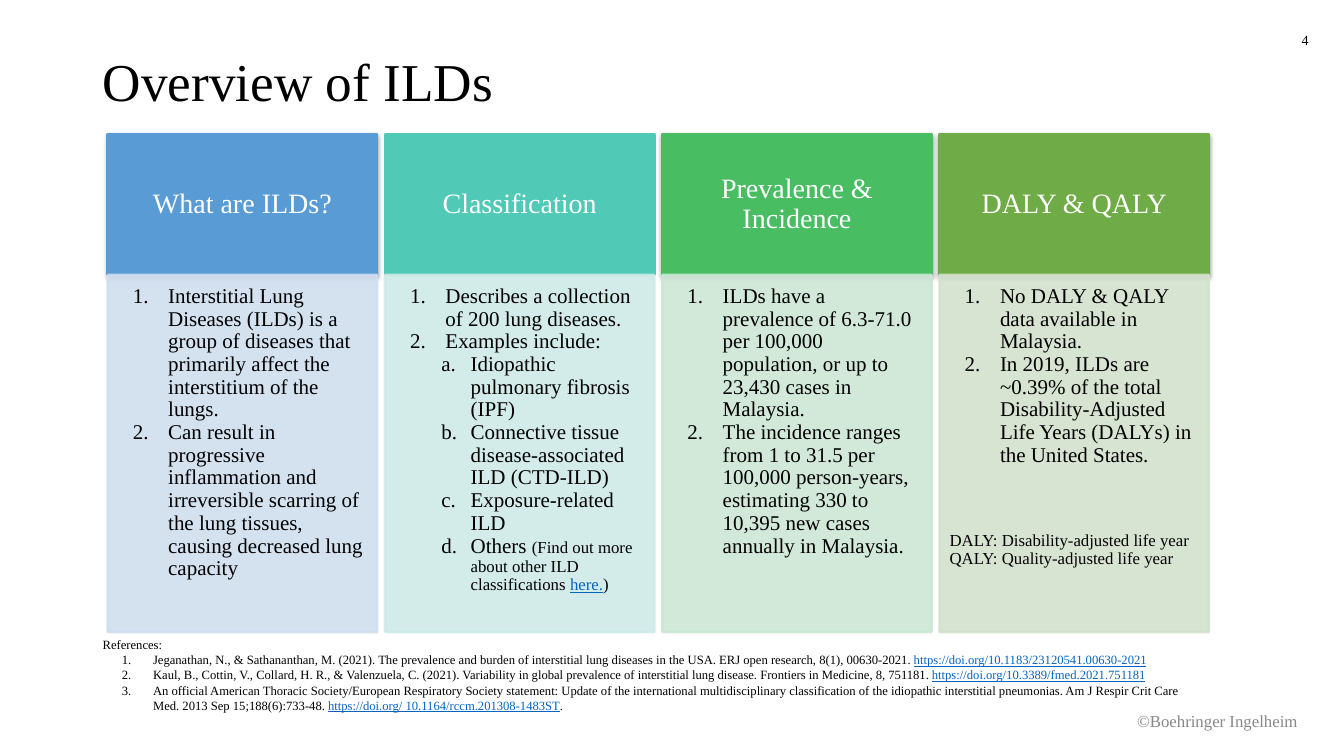
from lxml import etree
from pptx import Presentation
from pptx.dml.color import RGBColor
from pptx.enum.shapes import MSO_SHAPE
from pptx.enum.text import MSO_ANCHOR as ANCHOR, MSO_AUTO_SIZE as AUTO, PP_ALIGN as ALIGN
from pptx.oxml import parse_xml
from pptx.oxml.ns import nsdecls, qn
from pptx.util import Inches, Pt

FONT = "Times New Roman"
COLORS = {"black": "000000", "white": "FFFFFF", "grey": "888888", "link": "0563C1",
          "blue": "599BD5", "teal": "50C9B6", "green": "48BD62", "olive": "6FAB46",
          "pale blue": "CFDEEF", "pale teal": "CDEAE8", "pale green": "CCE6D4",
          "pale olive": "D3E1CC"}
BODY_ALPHA = 88000


def write(tf, *runs, size=15, color="black", align=ALIGN.LEFT, spacing=None,
          before=0, number=None, indent=(0, 0), level=0):
    """Add a paragraph; a run is a string or (text, size, colour name)."""
    p = tf.paragraphs[0]
    if p.runs:
        p = tf.add_paragraph()
    p.alignment, p.level = align, level
    p.space_before = Pt(before)
    if spacing:
        p.line_spacing = spacing
    pPr = p._p.get_or_add_pPr()
    pPr.set("marL", str(Inches(indent[0])))
    pPr.set("indent", str(Inches(indent[1])))
    if number:
        etree.SubElement(pPr, qn("a:buFont"), typeface="+mj-lt")
        etree.SubElement(pPr, qn("a:buAutoNum"), type=number)
    else:
        etree.SubElement(pPr, qn("a:buNone"))
    for run in runs:
        text, run_size, run_color = (run, size, color) if isinstance(run, str) else run
        r = p.add_run()
        r.text = text
        r.font.name, r.font.size = FONT, Pt(run_size)
        r.font.color.rgb = RGBColor.from_string(COLORS[run_color])
        r.font.underline = run_color == "link"


def add_panel(left, top, width, height, color, insets, anchor):
    sp = s.shapes.add_shape(MSO_SHAPE.RECTANGLE, Inches(left), Inches(top),
                            Inches(width), Inches(height))
    sp.shadow.inherit = False
    sp.fill.solid()
    sp.fill.fore_color.rgb = RGBColor.from_string(COLORS[color])
    sp.line.color.rgb = RGBColor.from_string(COLORS[color])
    sp.line.width = Pt(2)
    tf = sp.text_frame
    tf.word_wrap, tf.vertical_anchor = True, anchor
    tf.margin_left, tf.margin_top, tf.margin_right, tf.margin_bottom = map(Inches, insets)
    return sp


prs = Presentation()
prs.slide_width, prs.slide_height = Inches(13.33), Inches(7.5)
s = prs.slides.add_slide(prs.slide_layouts[5])

# Title
title = s.shapes.title
title.left, title.top, title.width, title.height = map(Inches, (0.92, 0.4, 11.5, 0.87))
tf = title.text_frame
tf.auto_size, tf.vertical_anchor = AUTO.NONE, ANCHOR.MIDDLE
write(tf, "Overview of ILDs", size=38, spacing=0.9)

# Slide number and footer
for text, box, size, color, align in [
    ("4", (12.69, 0.15, 0.51, 0.5), 10, "black", ALIGN.CENTER),
    ("©Boehringer Ingelheim", (8.47, 6.95, 4.5, 0.4), 12, "grey", ALIGN.RIGHT),
]:
    tf = s.shapes.add_textbox(*map(Inches, box)).text_frame
    tf.word_wrap, tf.vertical_anchor = True, ANCHOR.MIDDLE
    write(tf, text, size=size, color=color, align=align)

# References
references = [
    ["Jeganathan, N., & Sathananthan, M. (2021). The prevalence and burden of interstitial "
     "lung diseases in the USA. ERJ open research, 8(1), 00630-2021. ",
     ("https://doi.org/10.1183/23120541.00630-2021", 9, "link")],
    ["Kaul, B., Cottin, V., Collard, H. R., & Valenzuela, C. (2021). Variability in global "
     "prevalence of interstitial lung disease. Frontiers in Medicine, 8, 751181. ",
     ("https://doi.org/10.3389/fmed.2021.751181", 9, "link")],
    ["An official American Thoracic Society/European Respiratory Society statement: Update of "
     "the international multidisciplinary classification of the idiopathic interstitial "
     "pneumonias. Am J Respir Crit Care Med. 2013 Sep 15;188(6):733-48. ",
     ("https://doi.org/ 10.1164/rccm.201308-1483ST", 9, "link"), "."],
]
tf = s.shapes.add_textbox(Inches(0.92), Inches(6.27), Inches(11.07), Inches(0.86)).text_frame
tf.word_wrap = True
write(tf, "References:", size=9)
for reference in references:
    write(tf, *reference, size=9, number="arabicPeriod", indent=(0.5, -0.31))

# Four columns: heading, colour, heading shadow, body paragraphs
ITEM = dict(number="arabicPeriod", indent=(0.5, -0.35))
SUBITEM = dict(number="alphaLcPeriod", indent=(0.75, -0.29), level=1)
columns = [
    ("What are ILDs?", "blue", True, [
        (["Interstitial Lung Diseases (ILDs) is a group of diseases that primarily affect "
          "the interstitium of the lungs."], ITEM),
        (["Can result in progressive inflammation and irreversible scarring of the lung "
          "tissues, causing decreased lung capacity"], ITEM)]),
    ("Classification", "teal", False, [
        (["Describes a collection of 200 lung diseases."], ITEM),
        (["Examples include:"], ITEM),
        (["Idiopathic pulmonary fibrosis (IPF)"], SUBITEM),
        (["Connective tissue disease-associated ILD (CTD-ILD)"], SUBITEM),
        (["Exposure-related ILD"], SUBITEM),
        (["Others ", ("(Find out more about other ILD classifications ", 12, "black"),
          ("here.", 12, "link"), (")", 12, "black")], SUBITEM)]),
    ("Prevalence & Incidence", "green", True, [
        (["ILDs have a prevalence of 6.3-71.0 per 100,000 population, or up to 23,430 cases "
          "in Malaysia."], ITEM),
        (["The incidence ranges from 1 to 31.5 per 100,000 person-years, estimating 330 to "
          "10,395 new cases annually in Malaysia."], ITEM)]),
    ("DALY & QALY", "olive", True, [
        (["No DALY & QALY data available in Malaysia."], ITEM),
        (["In 2019, ILDs are ~0.39% of the total Disability-Adjusted Life Years (DALYs) in "
          "the United States."], ITEM),
        (["DALY: Disability-adjusted life year"], dict(size=12, before=46.5)),
        (["QALY: Quality-adjusted life year"], dict(size=12))]),
]
LEFT, PITCH, WIDTH = 1.07, 2.75, 2.67
for i, (heading, color, has_shadow, paragraphs) in enumerate(columns):
    left = LEFT + i * PITCH
    head = add_panel(left, 1.33, WIDTH, 1.39, color, (0.13, 0.08, 0.13, 0.08), ANCHOR.MIDDLE)
    write(head.text_frame, heading, size=20, color="white", align=ALIGN.CENTER, spacing=0.9)
    if has_shadow:
        effects = head._element.spPr.find(qn("a:effectLst"))
        effects.append(parse_xml(
            f'<a:outerShdw {nsdecls("a")} blurRad="{Pt(3.1)}" dist="{Pt(1.6)}" dir="5400000" '
            f'rotWithShape="0"><a:srgbClr val="{COLORS["black"]}"><a:alpha val="35000"/>'
            '</a:srgbClr></a:outerShdw>'))

    body = add_panel(left, 2.73, WIDTH, 3.54, f"pale {color}", (0.1, 0.1, 0.13, 0.15), ANCHOR.TOP)
    for clr in body._element.spPr.iter(qn("a:srgbClr")):
        etree.SubElement(clr, qn("a:alpha"), val=str(BODY_ALPHA))
    for runs, style in paragraphs:
        write(body.text_frame, *runs, spacing=0.9, **style)

prs.save("out.pptx")
